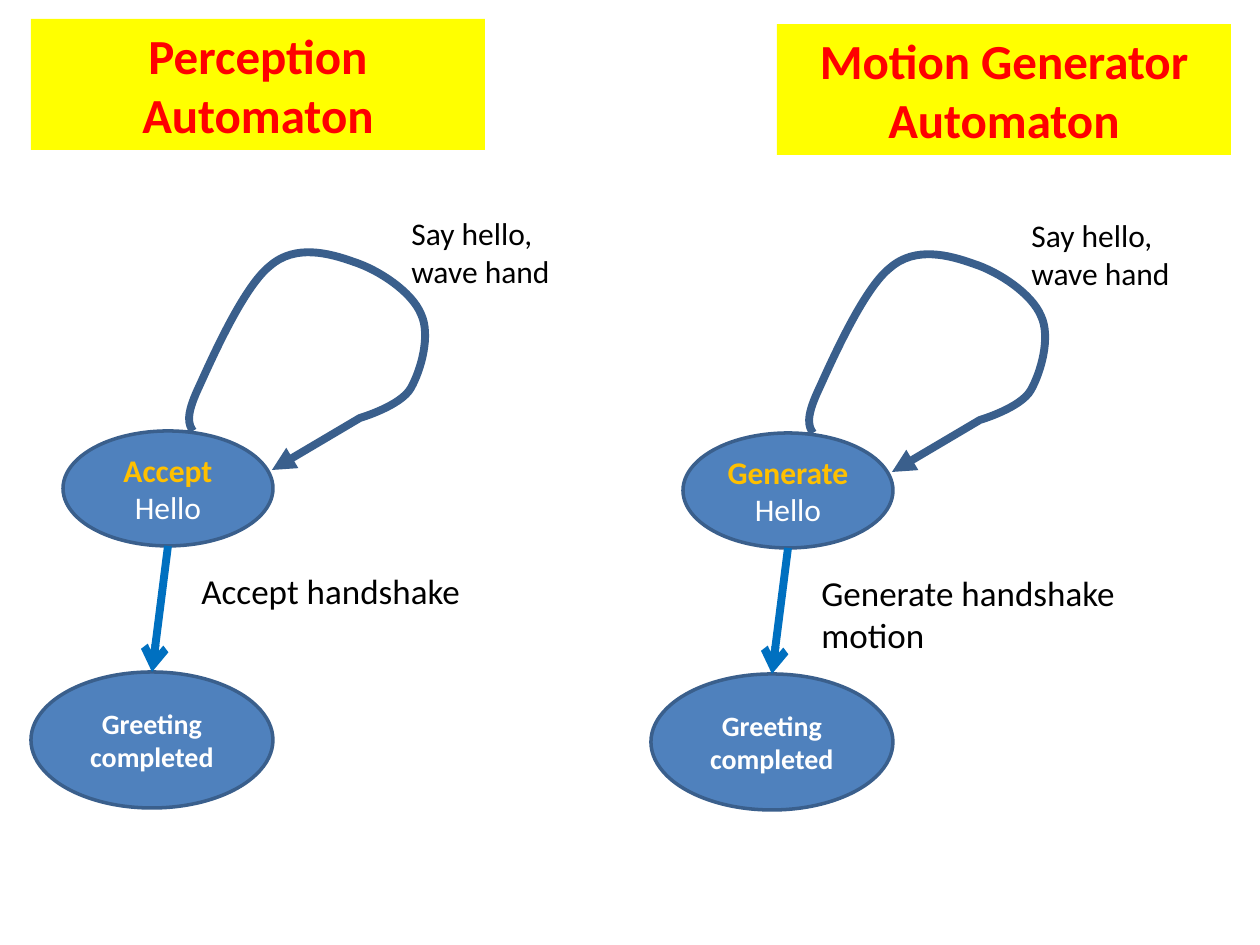
"""Builds a slide with two greeting automata side by side."""
from lxml.etree import SubElement
from pptx import Presentation
from pptx.dml.color import RGBColor
from pptx.enum.shapes import MSO_CONNECTOR as CONN, MSO_SHAPE as SHAPE
from pptx.enum.text import MSO_ANCHOR as ANCHOR, PP_ALIGN as ALIGN
from pptx.oxml.ns import qn
from pptx.util import Pt

PX = 914400 / 126
BLUE = RGBColor(0x4F, 0x81, 0xBD)
NAVY = RGBColor(0x3A, 0x5F, 0x8C)
SKY = RGBColor(0x00, 0x70, 0xC0)
YELLOW = RGBColor(0xFF, 0xFF, 0x00)
RED = RGBColor(0xFF, 0x00, 0x00)
GOLD = RGBColor(0xFF, 0xC0, 0x00)
WHITE = RGBColor(0xFF, 0xFF, 0xFF)
BLACK = RGBColor(0x00, 0x00, 0x00)

AUTOMATA = [
    {"heading": "Perception Automaton", "heading_at": (31, 19), "origin": (0, 0),
     "verb": "Accept", "step": "Accept handshake", "step_h": 55},
    {"heading": "Motion Generator Automaton", "heading_at": (777, 24), "origin": (620, 2),
     "verb": "Generate", "step": "Generate handshake motion", "step_h": 97},
]
LOOP_START = (193, 431)
LOOP_CURVES = [
    ((189, 425), (185, 417), (198, 389)),
    ((210, 363), (243, 287), (270, 266)),
    ((295, 244), (329, 253), (354, 262)),
    ((379, 270), (412, 292), (421, 314)),
    ((431, 335), (421, 370), (411, 388)),
    ((401, 406), (360, 418), (360, 418)),
]
LOOP_END = (272, 470)
HEADING = {"size": Pt(28), "bold": True}
LABEL = {"size": Pt(18), "bold": False}
STEP = {"size": Pt(20), "bold": False}
VERB = {"size": Pt(18), "bold": True}
DONE = {"size": Pt(16), "bold": True}


def emu(*lengths):
    return [round(n * PX) for n in lengths]


def write(s, runs, align=ALIGN.LEFT, anchor=ANCHOR.TOP):
    tf = s.text_frame
    tf.word_wrap = True
    tf.vertical_anchor = anchor
    p = tf.paragraphs[0]
    p.alignment = align
    for text, color, fmt in runs:
        r = p.add_run()
        r.text = text
        r.font.color.rgb = color
        for name, value in {"name": "Calibri", **fmt}.items():
            setattr(r.font, name, value)


def add_label(sp, box, text, fmt):
    write(sp.add_textbox(*emu(*box)), [(text, BLACK, fmt)])


def add_block(sp, kind, box, fill, runs, anchor, line=None):
    s = sp.add_shape(kind, *emu(*box))
    s.shadow.inherit = False
    s.fill.solid()
    s.fill.fore_color.rgb = fill
    if line is None:
        s.line.fill.background()
    else:
        s.line.color.rgb = line
        s.line.width = Pt(2)
    write(s, runs, ALIGN.CENTER, anchor)
    return s


def style_arrow(s, color, head):
    s.line.color.rgb = color
    s.line.width = Pt(4.5)
    SubElement(s.line._get_or_add_ln(), qn("a:tailEnd"), type=head)


def add_loop(sp, dx, dy):
    def shift(point):
        return point[0] + dx, point[1] + dy

    builder = sp.build_freeform(*shift(LOOP_START), scale=PX)
    points = [shift(pt) for curve in LOOP_CURVES for pt in curve]
    builder.add_line_segments(points + [shift(LOOP_END)], close=False)
    s = builder.convert_to_shape()
    s.shadow.inherit = False
    s.fill.background()
    style_arrow(s, NAVY, "triangle")
    lines = s._element.xpath(".//a:lnTo")
    for i in range(0, 3 * len(LOOP_CURVES), 3):
        first, *others = lines[i:i + 3]
        first.tag = qn("a:cubicBezTo")
        for other in others:
            first.append(other[0])
            other.getparent().remove(other)


def add_automaton(sp, a):
    dx, dy = a["origin"]
    add_block(sp, SHAPE.RECTANGLE, (*a["heading_at"], 454, 131), YELLOW,
              [(a["heading"], RED, HEADING)], ANCHOR.TOP)
    add_block(sp, SHAPE.OVAL, (63 + dx, 431 + dy, 210, 115), BLUE,
              [(a["verb"], GOLD, VERB), (" Hello", WHITE, LABEL)], ANCHOR.MIDDLE, NAVY)
    add_loop(sp, dx, dy)
    add_label(sp, (399 + dx, 208 + dy, 168, 89), "Say hello, wave hand", LABEL)
    done = add_block(sp, SHAPE.OVAL, (31 + dx, 672 + dy, 242, 136), BLUE,
                     [("Greeting completed", WHITE, DONE)], ANCHOR.MIDDLE, NAVY)
    c = sp.add_connector(CONN.STRAIGHT, *emu(168 + dx, 546 + dy, 152 + dx, 672 + dy))
    c.end_connect(done, 0)
    style_arrow(c, SKY, "arrow")
    SubElement(c._element.spPr, qn("a:effectLst"))
    add_label(sp, (189 + dx, 563 + dy, 336, a["step_h"]), a["step"], STEP)


def main():
    prs = Presentation()
    prs.slide_width, prs.slide_height = emu(1260, 945)
    sp = prs.slides.add_slide(prs.slide_layouts[6]).shapes
    for a in AUTOMATA:
        add_automaton(sp, a)
    prs.save("out.pptx")


if __name__ == "__main__":
    main()
